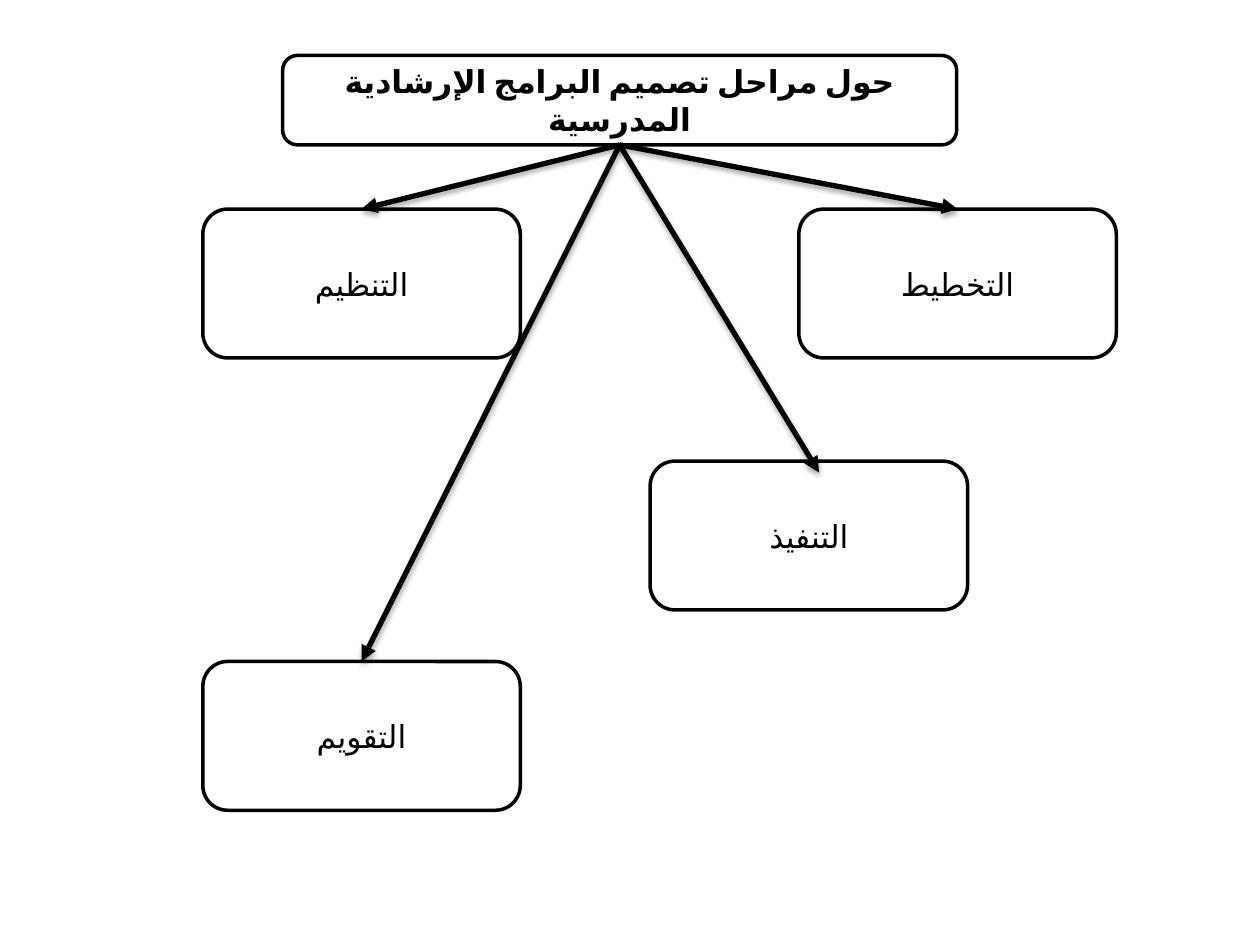
"""Builds a slide showing the design stages of school guidance programmes."""
from dataclasses import dataclass

from pptx import Presentation
from pptx import util as u
from pptx.dml import color
from pptx.enum import shapes, text
from pptx.oxml import ns, parse_xml

COLORS = {"ink": "000000", "paper": "FFFFFF"}
FRAME = {"word_wrap": True, "vertical_anchor": text.MSO_ANCHOR.MIDDLE}
FONT = {"name": "Calibri", "size": u.Pt(18)}
STAGE_W, STAGE_H = 181.4, 85
LEFT_X, TOP_Y = 115.9, 119.5
SHADOW = (
    f'<a:effectLst {ns.nsdecls("a")}><a:outerShdw blurRad="{u.Pt(3.1)}" dist="{u.Pt(1.8)}" '
    f'dir="5400000" rotWithShape="0"><a:srgbClr val="{COLORS["ink"]}">'
    '<a:alpha val="35000"/></a:srgbClr></a:outerShdw></a:effectLst>'
)
ARROWHEAD = f'<a:tailEnd {ns.nsdecls("a")} type="triangle"/>'
ARABIC_FONT = f'<a:cs {ns.nsdecls("a")} typeface="{FONT["name"]}"/>'


@dataclass
class Box:
    """A rounded box with centred text, in points."""
    label: str
    x: float
    y: float
    w: float = STAGE_W
    h: float = STAGE_H
    bold: bool = False


@dataclass
class Arrow:
    """An arrow from the title to a stage, joined unless a free end is given."""
    target: str
    free_end: tuple[float, float] | None = None


BOXES = [
    Box("حول مراحل تصميم البرامج الإرشادية المدرسية", 161.5, 31.7, 385.2, 51.1, True),
    Box("التخطيط", 456.5, TOP_Y),
    Box("التقويم", LEFT_X, 378),
    Box("التنظيم", LEFT_X, TOP_Y),
    Box("التنفيذ", 371.5, 263.5),
]
ARROWS = [
    Arrow("التنظيم"),
    Arrow("التخطيط"),
    Arrow("التنفيذ", (468, 270)),
    Arrow("التقويم"),
]


def rgb(name: str) -> color.RGBColor:
    """Return a named colour."""
    return color.RGBColor.from_string(COLORS[name])


def apply(obj, values: dict) -> None:
    """Set each attribute of an object from a dict."""
    for key, value in values.items():
        setattr(obj, key, value)


def draw_box(s, box: Box):
    """Draw one rounded box and return it."""
    sp = s.shapes.add_shape(shapes.MSO_SHAPE.ROUNDED_RECTANGLE,
                            *map(u.Pt, (box.x, box.y, box.w, box.h)))
    sp.shadow.inherit = False
    sp.fill.solid()
    sp.fill.fore_color.rgb = rgb("paper")
    sp.line.color.rgb = rgb("ink")
    sp.line.width = u.Pt(2)
    tf = sp.text_frame
    apply(tf, FRAME)
    p = tf.paragraphs[0]
    p.alignment = text.PP_ALIGN.CENTER
    p._p.get_or_add_pPr().set("rtl", "1")
    r = p.add_run()
    r.text = box.label
    apply(r.font, FONT | {"bold": box.bold})
    r.font.color.rgb = rgb("ink")
    r_pr = r._r.get_or_add_rPr()
    r_pr.set("lang", "ar-SA")
    r_pr.append(parse_xml(ARABIC_FONT))
    return sp


def draw_arrow(s, arrow: Arrow, title, stage) -> None:
    """Draw one shadowed arrow from the title to a stage."""
    x, y = map(u.Pt, arrow.free_end or (0, 0))
    cxn = s.shapes.add_connector(shapes.MSO_CONNECTOR.STRAIGHT,
                                 title.left + title.width // 2,
                                 title.top + title.height, x, y)
    cxn.begin_connect(title, 2)
    if arrow.free_end is None:
        cxn.end_connect(stage, 0)
    cxn.line.color.rgb = rgb("ink")
    cxn.line.width = u.Pt(3)
    sp_pr = cxn._element.spPr
    sp_pr.find(ns.qn("a:ln")).append(parse_xml(ARROWHEAD))
    sp_pr.append(parse_xml(SHADOW))


def main() -> None:
    """Build and save the slide."""
    prs = Presentation()
    apply(prs, {"slide_width": u.Pt(720), "slide_height": u.Pt(540)})
    s = prs.slides.add_slide(prs.slide_layouts[6])
    drawn = {box.label: draw_box(s, box) for box in BOXES}
    title = drawn[BOXES[0].label]
    for arrow in ARROWS:
        draw_arrow(s, arrow, title, drawn[arrow.target])
    prs.save("out.pptx")


if __name__ == "__main__":
    main()
